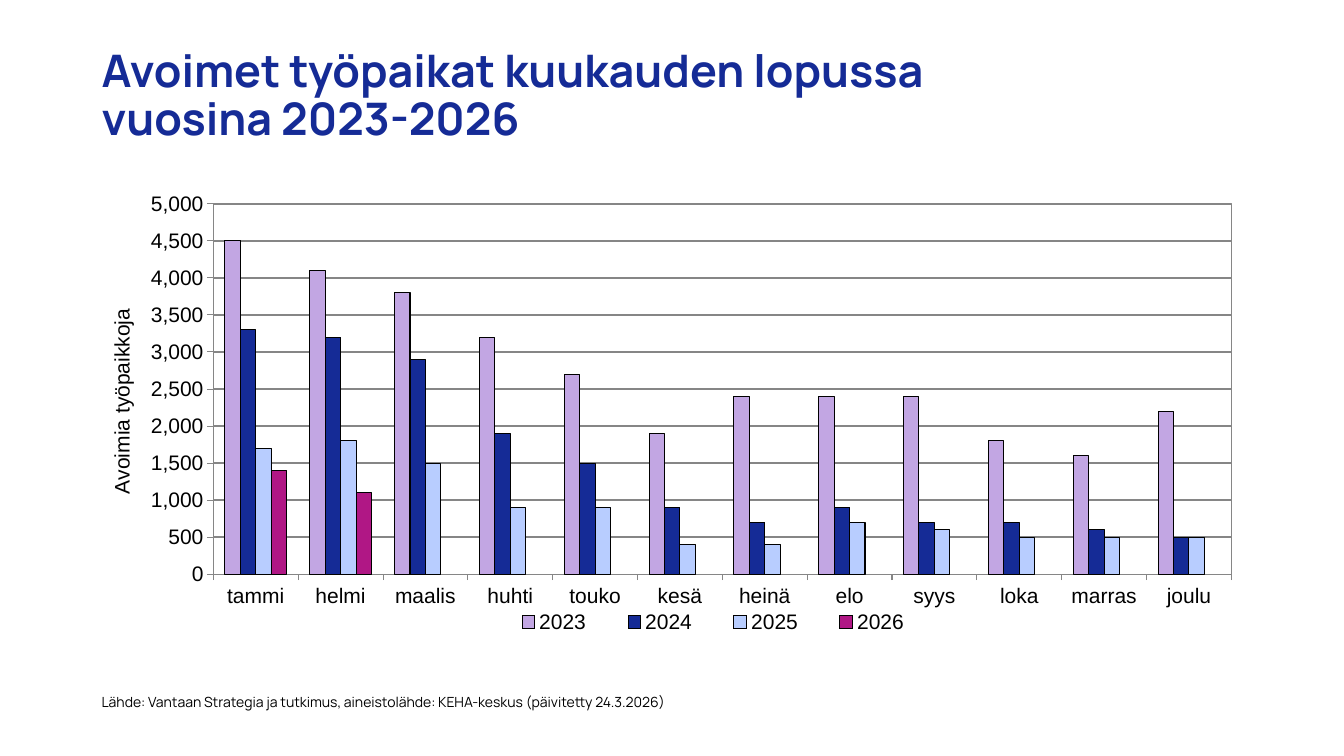
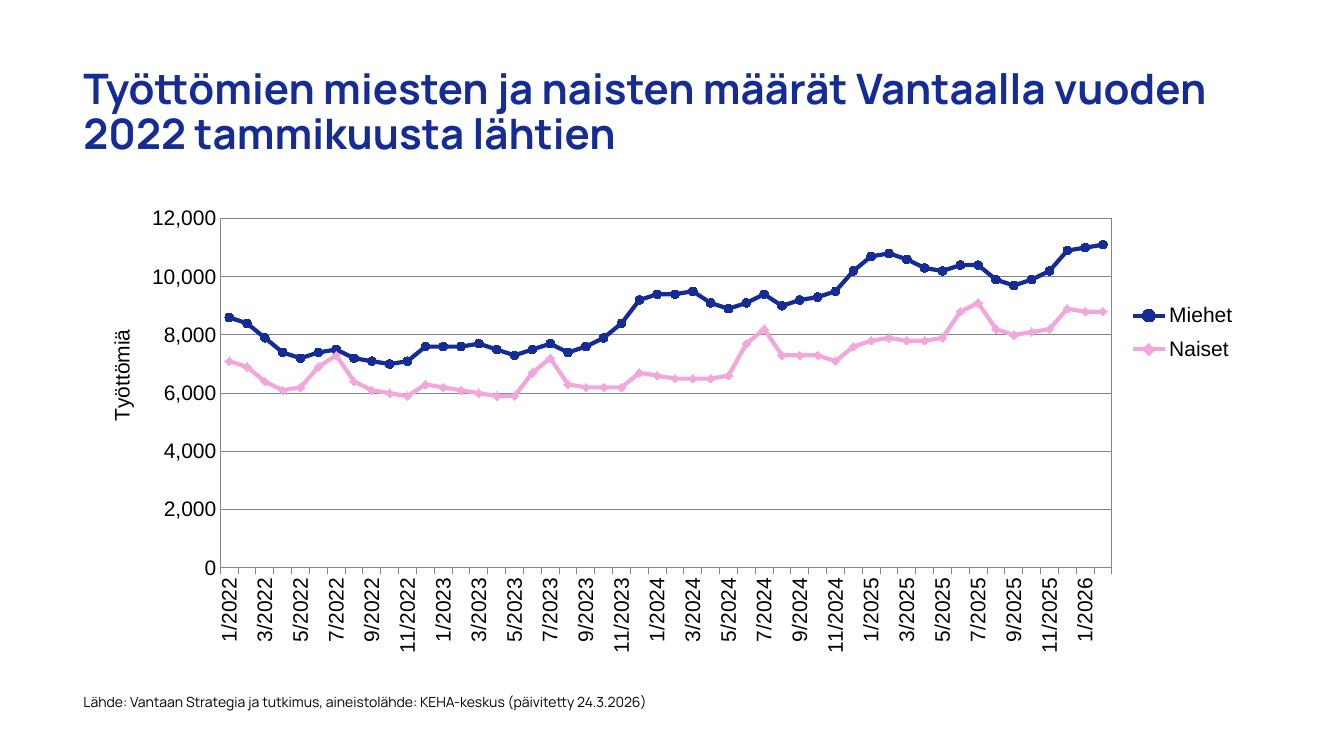
from dataclasses import dataclass

import lxml.etree
import pptx
import pptx.chart.data
import pptx.dml.color
import pptx.enum.chart
import pptx.enum.text
import pptx.oxml.ns
import pptx.util

Inches = pptx.util.Inches
Pt = pptx.util.Pt
RGB = pptx.dml.color.RGBColor.from_string
qn = pptx.oxml.ns.qn
xl = pptx.enum.chart


@dataclass(frozen=True)
class Theme:
    blue: str = "152B96"
    lilac: str = "C2A6E3"
    sky: str = "B8CDFF"
    magenta: str = "B01785"
    pink: str = "F2A6DB"
    black: str = "000000"
    grey: str = "868686"
    font: str = "Manrope"
    chart_font: str = "Arial"
    source_size: int = 10
    chart_size: int = 15
    rule: float = 0.75
    series_line: float = 3
    marker_size: int = 6


theme = Theme()
source = "Lähde: Vantaan Strategia ja tutkimus, aineistolähde: KEHA-keskus (päivitetty 24.3.2026)"
months = ["tammi", "helmi", "maalis", "huhti", "touko", "kesä",
          "heinä", "elo", "syys", "loka", "marras", "joulu"]
year_months = [f"{month}/{year}" for year in range(2022, 2027) for month in range(1, 13)][:50]

pages = [
    dict(
        title=["Avoimet työpaikat kuukauden lopussa", "vuosina 2023-2026"],
        title_size=32, left=0.91, title_height=1.12, chart_top=1.84,
        kind=xl.XL_CHART_TYPE.COLUMN_CLUSTERED, cats=months,
        axis_title="Avoimia työpaikkoja", axis_title_at=(0.01, 0.26),
        top_value=5000, step=500, grid=1,
        plot_at=(0.104, 0.04, 0.878, 0.806),
        legend=xl.XL_LEGEND_POSITION.BOTTOM, legend_at=(0.34, 0.91, 0.39, 0.08),
        series=[
            ("2023", theme.lilac, None,
             [4500, 4100, 3800, 3200, 2700, 1900, 2400, 2400, 2400, 1800, 1600, 2200]),
            ("2024", theme.blue, None,
             [3300, 3200, 2900, 1900, 1500, 900, 700, 900, 700, 700, 600, 500]),
            ("2025", theme.sky, None,
             [1700, 1800, 1500, 900, 900, 400, 400, 700, 600, 500, 500, 500]),
            ("2026", theme.magenta, None, [1400, 1100] + [None] * 10),
        ],
    ),
    dict(
        title=["Työttömien miesten ja naisten määrät Vantaalla vuoden 2022 tammikuusta lähtien"],
        title_size=30, left=0.73, title_height=1.45, chart_top=2,
        kind=xl.XL_CHART_TYPE.LINE_MARKERS, cats=year_months,
        axis_title="Työttömiä", axis_title_at=(0.01, 0.27),
        top_value=12000, step=2000, grid=theme.rule,
        plot_at=(0.11, 0.037, 0.769, 0.76),
        legend=xl.XL_LEGEND_POSITION.RIGHT, legend_at=(0.89, 0.2, 0.1, 0.17),
        series=[
            ("Miehet", theme.blue, xl.XL_MARKER_STYLE.CIRCLE,
             [8600, 8400, 7900, 7400, 7200, 7400, 7500, 7200, 7100, 7000, 7100, 7600,
              7600, 7600, 7700, 7500, 7300, 7500, 7700, 7400, 7600, 7900, 8400, 9200,
              9400, 9400, 9500, 9100, 8900, 9100, 9400, 9000, 9200, 9300, 9500, 10200,
              10700, 10800, 10600, 10300, 10200, 10400, 10400, 9900, 9700, 9900, 10200, 10900,
              11000, 11100]),
            ("Naiset", theme.pink, xl.XL_MARKER_STYLE.DIAMOND,
             [7100, 6900, 6400, 6100, 6200, 6900, 7300, 6400, 6100, 6000, 5900, 6300,
              6200, 6100, 6000, 5900, 5900, 6700, 7200, 6300, 6200, 6200, 6200, 6700,
              6600, 6500, 6500, 6500, 6600, 7700, 8200, 7300, 7300, 7300, 7100, 7600,
              7800, 7900, 7800, 7800, 7900, 8800, 9100, 8200, 8000, 8100, 8200, 8900,
              8800, 8800]),
        ],
    ),
]


def add_text(s, box, lines, size, color, bold=False, spacing=1.0,
             anchor=pptx.enum.text.MSO_ANCHOR.TOP):
    tf = s.shapes.add_textbox(*[Inches(v) for v in box]).text_frame
    tf.word_wrap = True
    tf.vertical_anchor = anchor
    p = tf.paragraphs[0]
    p.line_spacing = spacing
    for i, line in enumerate(lines):
        if i:
            p.add_line_break()
        r = p.add_run()
        r.text = line
        r.font.name = theme.font
        r.font.size = Pt(size)
        r.font.bold = bold
        r.font.color.rgb = RGB(color)


def place(element, index, box, inner=False):
    for old in element.findall(qn("c:layout")):
        element.remove(old)
    layout = lxml.etree.Element(qn("c:layout"))
    manual = lxml.etree.SubElement(layout, qn("c:manualLayout"))
    settings = [("layoutTarget", "inner")] if inner else []
    settings += [("xMode", "edge"), ("yMode", "edge")]
    settings += list(zip("xywh", box))
    for tag, value in settings:
        lxml.etree.SubElement(manual, qn(f"c:{tag}")).set("val", str(value))
    element.insert(index, layout)


prs = pptx.Presentation()
prs.slide_width = Inches(13.33)
prs.slide_height = Inches(7.5)

for page in pages:
    s = prs.slides.add_slide(prs.slide_layouts[6])
    add_text(s, (page["left"], 0.4, 11.5, page["title_height"]), page["title"],
             page["title_size"], theme.blue, bold=True, spacing=0.9,
             anchor=pptx.enum.text.MSO_ANCHOR.MIDDLE)
    add_text(s, (page["left"], 6.83, 6.54, 0.4), [source], theme.source_size, theme.black)

    data = pptx.chart.data.CategoryChartData(number_format="#,##0")
    data.categories = page["cats"]
    for name, color, marker, values in page["series"]:
        data.add_series(name, values)
    chart = s.shapes.add_chart(page["kind"], Inches(0.92), Inches(page["chart_top"]),
                               Inches(11.5), Inches(4.56), data).chart
    chart.has_title = False
    chart.font.name = theme.chart_font
    chart.font.size = Pt(theme.chart_size)
    chart.font.color.rgb = RGB(theme.black)

    plot = chart.plots[0]
    plot.vary_by_categories = False
    for series, (name, color, marker, values) in zip(plot.series, page["series"]):
        line = series.format.line
        if marker is None:
            series.format.fill.solid()
            series.format.fill.fore_color.rgb = RGB(color)
            line.color.rgb = RGB(theme.black)
            line.width = Pt(theme.rule)
        else:
            series.smooth = False
            line.color.rgb = RGB(color)
            line.width = Pt(theme.series_line)
            series.marker.style = marker
            series.marker.size = theme.marker_size
            series.marker.format.fill.solid()
            series.marker.format.fill.fore_color.rgb = RGB(color)
            series.marker.format.line.color.rgb = RGB(color)

    cat_axis, val_axis = chart.category_axis, chart.value_axis
    cat_axis.major_tick_mark = xl.XL_TICK_MARK.OUTSIDE
    cat_axis.has_major_gridlines = False
    val_axis.minimum_scale = 0
    val_axis.maximum_scale = page["top_value"]
    val_axis.major_unit = page["step"]
    val_axis.tick_labels.number_format = "#,##0"
    val_axis.tick_labels.number_format_is_linked = False
    val_axis.has_major_gridlines = True
    grid = val_axis.major_gridlines.format.line
    for line, width in ((cat_axis.format.line, theme.rule),
                        (val_axis.format.line, theme.rule), (grid, page["grid"])):
        line.color.rgb = RGB(theme.grey)
        line.width = Pt(width)

    if page["kind"] == xl.XL_CHART_TYPE.COLUMN_CLUSTERED:
        plot.gap_width = 150
        plot.overlap = 0
        val_axis.major_tick_mark = xl.XL_TICK_MARK.OUTSIDE
    else:
        val_axis.major_tick_mark = xl.XL_TICK_MARK.NONE
        val_axis.format.line.fill.background()
        labels = cat_axis.tick_labels.font
        labels.name = theme.chart_font
        labels.size = Pt(theme.chart_size)
        labels.color.rgb = RGB(theme.black)
        body = cat_axis._element.find(qn("c:txPr")).find(qn("a:bodyPr"))
        body.set("rot", "-5400000")
        body.set("vert", "horz")
        skip = lxml.etree.Element(qn("c:tickLblSkip"))
        skip.set("val", "2")
        cat_axis._element.find(qn("c:noMultiLvlLbl")).addprevious(skip)

    val_axis.has_title = True
    tf = val_axis.axis_title.text_frame
    r = tf.paragraphs[0].add_run()
    r.text = page["axis_title"]
    r.font.name = theme.chart_font
    r.font.size = Pt(theme.chart_size)
    r.font.bold = False
    r.font.color.rgb = RGB(theme.black)
    body = tf._txBody.find(qn("a:bodyPr"))
    body.set("rot", "-5400000")
    body.set("vert", "horz")
    place(val_axis.axis_title._element, 1, page["axis_title_at"])

    chart.has_legend = True
    chart.legend.position = page["legend"]
    chart.legend.include_in_layout = False
    chart.legend.font.name = theme.chart_font
    chart.legend.font.size = Pt(theme.chart_size)
    chart.legend.font.color.rgb = RGB(theme.black)
    place(chart.legend._element, 1, page["legend_at"])

    area = chart._chartSpace.chart.plotArea
    place(area, 0, page["plot_at"], inner=True)
    frame = lxml.etree.SubElement(area, qn("c:spPr"))
    lxml.etree.SubElement(frame, qn("a:noFill"))
    border = lxml.etree.SubElement(frame, qn("a:ln"))
    border.set("w", str(Pt(theme.rule)))
    fill = lxml.etree.SubElement(border, qn("a:solidFill"))
    lxml.etree.SubElement(fill, qn("a:srgbClr")).set("val", theme.grey)

prs.save("out.pptx")
